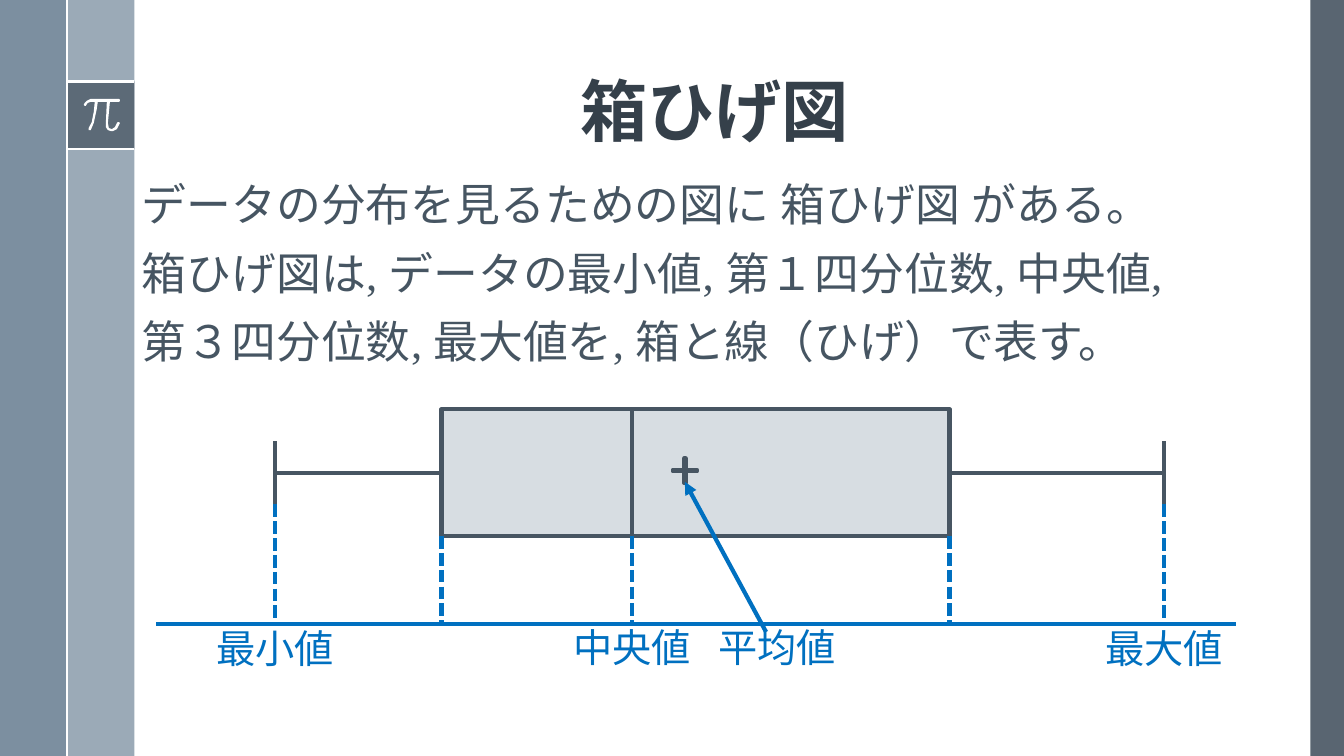
from dataclasses import dataclass

from lxml.etree import SubElement
from pptx import Presentation
from pptx.dml.color import RGBColor
from pptx.enum.dml import MSO_LINE
from pptx.enum.shapes import MSO_CONNECTOR, MSO_SHAPE
from pptx.enum.text import MSO_ANCHOR, PP_ALIGN
from pptx.oxml.ns import qn
from pptx.util import Pt

WHITE = RGBColor(0xFF, 0xFF, 0xFF)
SLATE = RGBColor(0x47, 0x55, 0x62)
STRIPE = RGBColor(0x9B, 0xAA, 0xB7)
STEEL = RGBColor(0x6A, 0x80, 0x93)
TITLE_INK = RGBColor(0x35, 0x40, 0x4A)
BODY_INK = RGBColor(0x46, 0x55, 0x62)
BOX_GREY = RGBColor(0xD7, 0xDD, 0xE2)
BLUE = RGBColor(0x00, 0x70, 0xC0)

PI_OUTLINE = [
    (35, 0), (7, 0), (3, 1.5), (1, 4), (0, 6), (1, 7), (2, 7), (4, 4.2), (7, 3),
    (11, 3), (10, 13), (8, 23), (5, 29), (4.6, 30), (5, 31), (6, 31.2), (7, 31),
    (10, 24.5), (13, 10), (14, 3), (23, 3), (22, 24), (22.2, 28), (24, 31),
    (27, 32), (29, 32), (33, 29.5), (36, 24), (35, 23), (34, 23), (33, 24),
    (31.4, 28), (28, 30), (25, 29), (24, 24), (26, 3), (35, 3), (36, 2), (36, 1),
]


@dataclass
class Box:
    left: float
    top: float
    width: float
    height: float

    def emu(self):
        return [Pt(v) for v in (self.left, self.top, self.width, self.height)]


def add_filled(shapes, kind, box, fill=None, alpha=None, line=None):
    shape = shapes.add_shape(kind, *box.emu())
    shape.shadow.inherit = False
    if fill is None:
        shape.fill.background()
    else:
        shape.fill.solid()
        shape.fill.fore_color.rgb = fill
    if alpha:
        colour = shape.fill._xPr.find(".//" + qn("a:srgbClr"))
        SubElement(colour, qn("a:alpha"), val=str(alpha * 1000))
    if line is None:
        shape.line.fill.background()
    else:
        shape.line.color.rgb = line
        shape.line.width = Pt(3)
    return shape


def add_line(shapes, start, end, colour, width=3, dashed=False, arrow=False):
    line = shapes.add_connector(
        MSO_CONNECTOR.STRAIGHT, *[Pt(v) for v in (*start, *end)])
    line.line.color.rgb = colour
    line.line.width = Pt(width)
    if dashed:
        line.line.dash_style = MSO_LINE.SQUARE_DOT
    if arrow:
        SubElement(line.line._get_or_add_ln(), qn("a:tailEnd"), type="triangle")
    SubElement(line._element.spPr, qn("a:effectLst"))


def add_text(shapes, box, lines, size, font, colour, east_asian="Lato", bold=False,
             align=PP_ALIGN.LEFT, anchor=MSO_ANCHOR.TOP, before=0, wrap=True):
    frame = shapes.add_textbox(*box.emu()).text_frame
    frame.word_wrap = wrap
    frame.vertical_anchor = anchor
    for i, line in enumerate(lines):
        paragraph = frame.paragraphs[0] if i == 0 else frame.add_paragraph()
        paragraph.alignment = align
        paragraph.line_spacing = 0.9
        paragraph.space_before = Pt(before)
        run = paragraph.add_run()
        run.text = line
        run.font.size = Pt(size)
        run.font.bold = bold
        run.font.name = font
        run.font.color.rgb = colour
        SubElement(run.font._element, qn("a:ea"), typeface=east_asian)


def add_side_bands(shapes, page):
    band, badge_top = 48, page.top + 58.2
    stripe_left = page.left + band
    stripe_right = stripe_left + band
    edge = Box(page.left + page.width - 24, page.top, 24, page.height)
    add_filled(shapes, MSO_SHAPE.RECTANGLE, edge, SLATE, 90)
    add_filled(shapes, MSO_SHAPE.RECTANGLE,
               Box(stripe_left, page.top, band, page.height), STRIPE)
    add_filled(shapes, MSO_SHAPE.RECTANGLE,
               Box(page.left, page.top, band, page.height), STEEL, 88)
    add_filled(shapes, MSO_SHAPE.RECTANGLE,
               Box(stripe_left, badge_top, band, band), SLATE, 75)
    for y in (badge_top, badge_top + band):
        add_line(shapes, (stripe_left, y), (stripe_right, y), WHITE, 1.5)
    add_pi(shapes, stripe_left + 11.8, badge_top + 12.4)
    add_line(shapes, (stripe_left, page.top),
             (stripe_left, page.top + page.height), WHITE, 1.5)


def add_pi(shapes, left, top):
    builder = shapes.build_freeform(*PI_OUTLINE[0], scale=float(Pt(0.72)))
    builder.add_line_segments(PI_OUTLINE[1:], close=True)
    symbol = builder.convert_to_shape(Pt(left), Pt(top))
    symbol.shadow.inherit = False
    symbol.fill.solid()
    symbol.fill.fore_color.rgb = WHITE
    symbol.line.fill.background()


def add_box_plot(shapes, area):
    """Draw the plot; the bottom of the area is the number axis."""
    minimum, q1, median, mean, q3, maximum = (
        area.left + x for x in (85, 203.8, 339.8, 377.6, 566.6, 720))
    top, axis = area.top, area.top + area.height
    bottom = top + 90.7
    middle = (top + bottom) / 2
    cap = 22.7

    add_line(shapes, (area.left, axis), (area.left + area.width, axis), BLUE)
    add_filled(shapes, MSO_SHAPE.RECTANGLE,
               Box(q1, top, q3 - q1, bottom - top), BOX_GREY, line=SLATE)
    add_line(shapes, (median, top), (median, bottom), SLATE)
    for quartile, extreme in ((q1, minimum), (q3, maximum)):
        add_line(shapes, (quartile, middle), (extreme, middle), SLATE)
        add_line(shapes, (extreme, middle + cap), (extreme, middle - cap), SLATE)
        add_line(shapes, (extreme, middle + cap), (extreme, axis), BLUE, dashed=True)
    for value in (q1, median, q3):
        add_line(shapes, (value, bottom), (value, axis), BLUE, dashed=True)

    mark = 17.4
    plus = add_filled(shapes, MSO_SHAPE.CROSS,
                      Box(mean - mark / 2, top + 35.2, mark, mark), line=SLATE)
    plus.adjustments[0] = 0.468
    add_line(shapes, (area.left + 435.6, axis + 5.7), (mean, top + 51.9),
             BLUE, arrow=True)
    label_centres = [("最小値", minimum, 0.8), ("中央値", median, 0),
                     ("最大値", maximum, 0.8), ("平均値", area.left + 443.6, 0)]
    for label, x, drop in label_centres:
        add_text(shapes, Box(x - 49.7, axis + drop, 99.4, 38), [label], 28, "Lato",
                 BLUE, align=PP_ALIGN.CENTER, wrap=False)


def main():
    deck = Presentation()
    deck.slide_width, deck.slide_height = Pt(960), Pt(540)
    shapes = deck.slides.add_slide(deck.slide_layouts[6]).shapes
    add_side_bands(shapes, Box(0, 0, 960, 540))
    add_text(shapes, Box(125.3, 13.7, 770.4, 97.9), ["箱ひげ図"], 48,
             "Noto Sans CJK JP", TITLE_INK, bold=True,
             align=PP_ALIGN.CENTER, anchor=MSO_ANCHOR.BOTTOM)
    add_text(shapes, Box(94.3, 127.4, 844.6, 154.1),
             ["データの分布を見るための図に 箱ひげ図 がある。",
              "箱ひげ図は, データの最小値, 第１四分位数, 中央値,",
              "第３四分位数, 最大値を, 箱と線（ひげ）で表す。"],
             32, "Times New Roman", BODY_INK, before=14)
    add_box_plot(shapes, Box(111.6, 292.3, 771.1, 153.4))
    deck.save("out.pptx")


if __name__ == "__main__":
    main()
